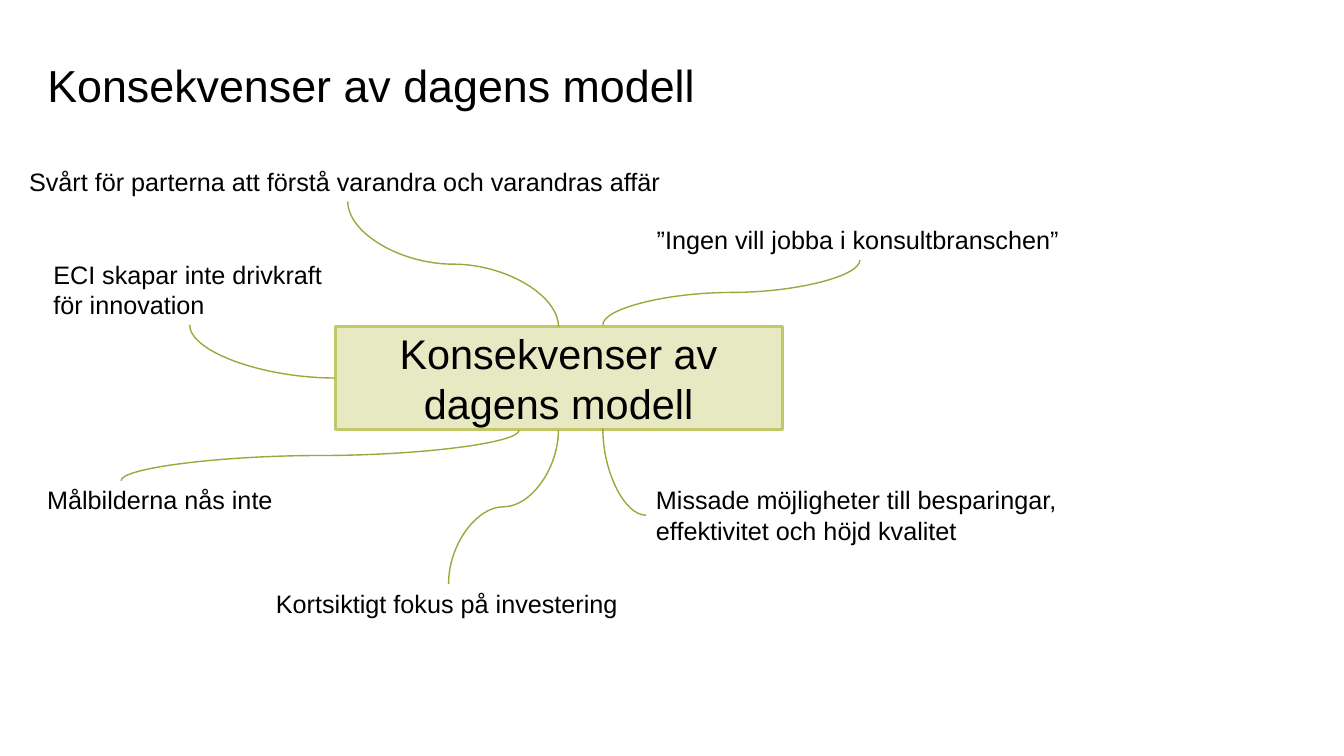
from lxml.etree import SubElement
from pptx import Presentation
from pptx.dml.color import RGBColor
from pptx.enum.shapes import MSO_CONNECTOR as CONN, MSO_SHAPE as SHAPE
from pptx.enum.text import MSO_ANCHOR as ANCHOR, MSO_AUTO_SIZE as AUTO, PP_ALIGN as ALIGN
from pptx.oxml.ns import qn
from pptx.util import Pt


def color(fmt, value):
    fmt.rgb = RGBColor.from_string(value)


def write(tf, lines, size, align=ALIGN.LEFT):
    for i, line in enumerate(lines):
        p = tf.add_paragraph() if i else tf.paragraphs[0]
        p.alignment = align
        r = p.add_run()
        r.text = line
        r.font.size = Pt(size)
        r.font.name = "Arial"
        color(r.font.color, "000000")


prs = Presentation()
prs.slide_width, prs.slide_height = Pt(960), Pt(540)
s = prs.slides.add_slide(prs.slide_layouts[5])

title = s.shapes.title
title.left, title.top, title.width, title.height = Pt(26.6), Pt(21.6), Pt(650), Pt(77)
title.text_frame.vertical_anchor = ANCHOR.MIDDLE
write(title.text_frame, ["Konsekvenser av dagens modell"], 32)

hub = s.shapes.add_shape(SHAPE.RECTANGLE, Pt(239.4), Pt(233.4), Pt(319.4), Pt(73.6))
hub.shadow.inherit = False
hub.fill.solid()
color(hub.fill.fore_color, "E7E9C2")
color(hub.line.color, "C2C767")
hub.line.width = Pt(2.25)
hub.text_frame.word_wrap = True
hub.text_frame.vertical_anchor = ANCHOR.MIDDLE
write(hub.text_frame, ["Konsekvenser av dagens modell"], 29.6, ALIGN.CENTER)

consequences = [
    (462, 156.5, 304.6, ["”Ingen vill jobba i konsultbranschen”"]),
    (13.7, 115.2, 469.4, ["Svårt för parterna att förstå varandra och varandras affär"]),
    (461.5, 342.7, 304.6, ["Missade möjligheter till besparingar,", "effektivitet och höjd kvalitet"]),
    (190, 417, 260.6, ["Kortsiktigt fokus på investering"]),
    (26.6, 342.7, 177, ["Målbilderna nås inte"]),
    (31, 181.4, 208, ["ECI skapar inte drivkraft", "för innovation"]),
]
for x, y, w, lines in consequences:
    h = 7.2 + 21.8 * len(lines)
    tf = s.shapes.add_textbox(Pt(x), Pt(y), Pt(w), Pt(h)).text_frame
    tf.word_wrap = False
    tf.auto_size = AUTO.SHAPE_TO_FIT_TEXT
    write(tf, lines, 18)

branches = [
    (248.4, 144, 398.9, 233.4, "curvedConnector3"),
    (614.2, 185.8, 430.6, 232, "curvedConnector3"),
    (135.4, 232, 239.4, 270, "curvedConnector2"),
    (370.8, 307.4, 86.4, 343.4, "curvedConnector3"),
    (398.9, 307, 320.4, 417, "curvedConnector3"),
    (430.6, 306, 461.5, 368, "curvedConnector2"),
]
for x1, y1, x2, y2, preset in branches:
    cx, cy = (x1 + x2) / 2, (y1 + y2) / 2
    rightward = x2 > x1
    half_w = (y2 - y1) / 2 * (-1 if rightward else 1)
    half_h = abs(x2 - x1) / 2
    c = s.shapes.add_connector(CONN.CURVE, Pt(cx - half_w), Pt(cy - half_h),
                               Pt(cx + half_w), Pt(cy + half_h))
    color(c.line.color, "A0A63D")
    c.line.width = Pt(1)
    sp_pr = c._element.spPr
    sp_pr.find(qn("a:xfrm")).set("rot", str((270 if rightward else 90) * 60000))
    sp_pr.find(qn("a:prstGeom")).set("prst", preset)
    SubElement(sp_pr, qn("a:effectLst"))

prs.save("out.pptx")
